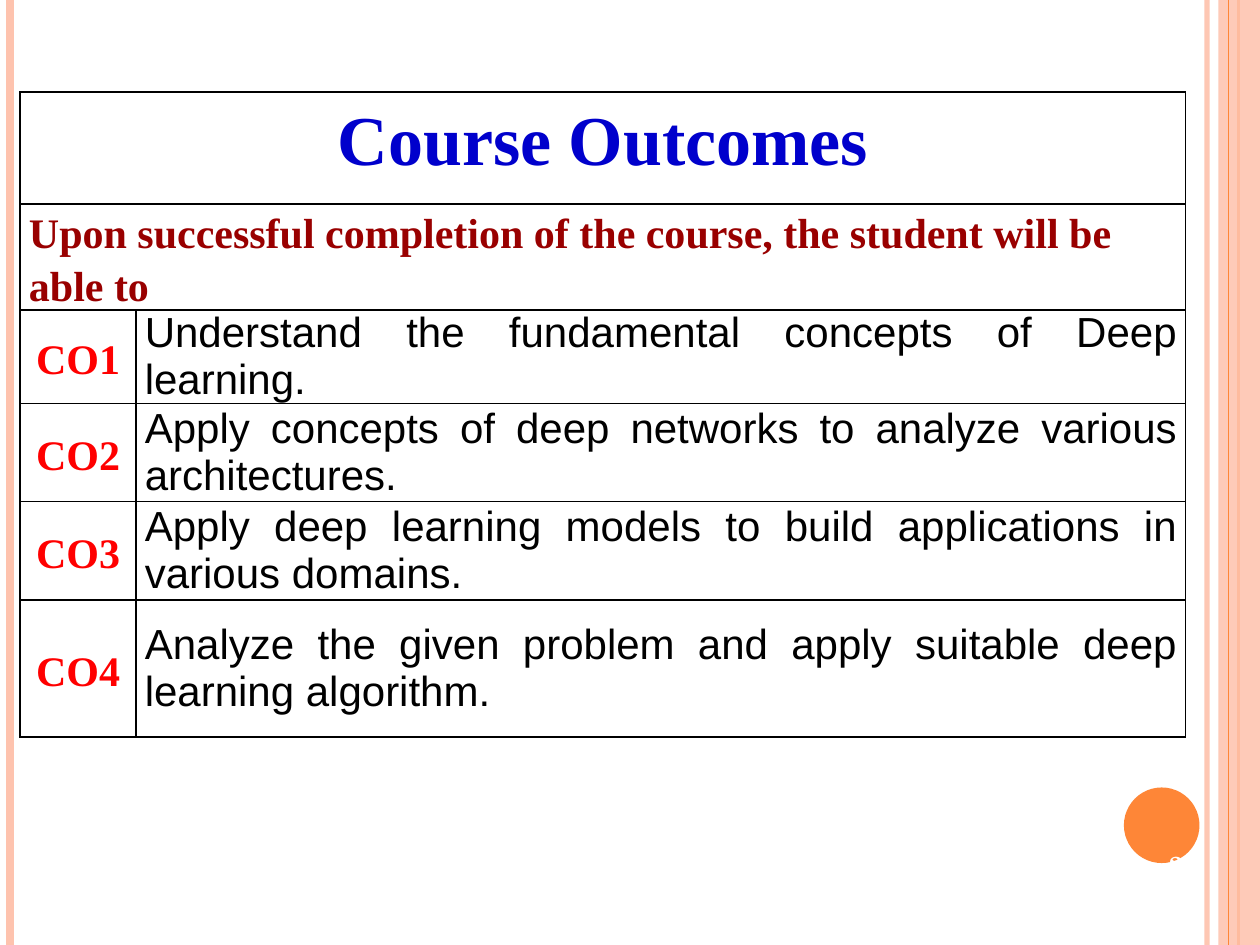
from lxml.etree import SubElement
from pptx import Presentation
from pptx.dml.color import RGBColor
from pptx.enum.shapes import MSO_CONNECTOR, MSO_SHAPE
from pptx.enum.text import MSO_ANCHOR, PP_ALIGN
from pptx.oxml.ns import qn
from pptx.util import Inches, Pt


def paint(fill, color, opacity=100):
    fill.solid()
    fill.fore_color.rgb = RGBColor.from_string(color)
    if opacity < 100:
        color_node = fill._xPr.find(qn("a:solidFill"))[0]
        SubElement(color_node, qn("a:alpha"), val=str(opacity * 1000))


def write(frame, text, font, size, color, bold, align, spacing=None):
    frame.text = text
    para = frame.paragraphs[0]
    para.alignment = align
    para.line_spacing = spacing
    span = para.runs[0]
    span.font.name = font
    span.font.size = Pt(size)
    span.font.bold = bold
    paint(span.font.fill, color)


deck = Presentation()
deck.slide_width = Inches(10)
deck.slide_height = Inches(7.5)
page = deck.slides.add_slide(deck.slide_layouts[6])
paint(page.background.fill, "FFFFFF")

decorations = [
    ("stripe", 9.58, "FEC3AE", 3, 93),
    ("stripe", 0.08, "FEC3AE", 4.5, 100),
    ("stripe", 9.83, "FE8637", 1.5, 100),
    ("band", 9.67, "FEC3AE", 0, 87),
    ("stripe", 9.75, "FE8637", 0.75, 100),
    ("badge", 8.92, "FE8637", 0, 100),
]
for kind, x, color, width, opacity in decorations:
    if kind == "stripe":
        stripe = page.shapes.add_connector(
            MSO_CONNECTOR.STRAIGHT, Inches(x), 0, Inches(x), Inches(7.5))
        stripe.line.width = Pt(width)
        paint(stripe.line.fill, color, opacity)
        SubElement(stripe._element.spPr, qn("a:effectLst"))
        continue
    if kind == "band":
        shape = page.shapes.add_shape(
            MSO_SHAPE.RECTANGLE, Inches(x), 0, Inches(0.33), Inches(7.5))
    else:
        shape = page.shapes.add_shape(
            MSO_SHAPE.OVAL, Inches(x), Inches(6.25), Inches(0.6), Inches(0.6))
    shape.shadow.inherit = False
    shape.line.fill.background()
    paint(shape.fill, color, opacity)

number_box = page.shapes.add_textbox(
    Inches(8.92), Inches(6.33), Inches(0.94), Inches(1.07))
number_box.text_frame.word_wrap = True
number_box.text_frame.vertical_anchor = MSO_ANCHOR.MIDDLE
write(number_box.text_frame, "21", "TeX Gyre Schola", 14, "FFFFFF", True,
      PP_ALIGN.CENTER)

outcomes = [
    "Understand the fundamental concepts of Deep learning. ",
    "Apply concepts of deep networks to analyze various architectures.",
    "Apply deep learning models to build applications in various domains.",
    "Analyze the given problem and apply suitable deep learning algorithm.",
]
row_heights = [0.89, 0.84, 0.74, 0.78, 0.78, 1.09]
table = page.shapes.add_table(
    len(row_heights), 2, Inches(0.16), Inches(0.73),
    Inches(9.25), Inches(sum(row_heights))).table
table.first_row = False
table.horz_banding = False
table.columns[0].width = Inches(0.92)
table.columns[1].width = Inches(8.33)
for row, height in zip(table.rows, row_heights):
    row.height = Inches(height)

for cell in table.iter_cells():
    cell.margin_left = cell.margin_right = Inches(0.07)
    cell.margin_top = cell.margin_bottom = 0
    properties = cell._tc.get_or_add_tcPr()
    for side in ("lnL", "lnR", "lnT", "lnB"):
        border = SubElement(properties, qn("a:" + side), w=str(Pt(1)))
        border_fill = SubElement(border, qn("a:solidFill"))
        SubElement(border_fill, qn("a:srgbClr"), val="000000")
    cell.fill.background()

for index in range(2):
    table.cell(index, 0).merge(table.cell(index, 1))
write(table.cell(0, 0).text_frame, "Course Outcomes",
      "Times New Roman", 40, "0000CC", True, PP_ALIGN.CENTER, 1.15)
table.cell(1, 0).margin_bottom = Inches(-0.08)
write(table.cell(1, 0).text_frame,
      "Upon successful completion of the course, the student will be able to",
      "Times New Roman", 24, "990000", True, PP_ALIGN.LEFT, 1.15)

for number, outcome in enumerate(outcomes, start=1):
    code_cell, outcome_cell = table.rows[number + 1].cells
    code_cell.vertical_anchor = MSO_ANCHOR.MIDDLE
    outcome_cell.vertical_anchor = MSO_ANCHOR.MIDDLE
    outcome_cell.margin_top = outcome_cell.margin_bottom = Inches(-0.03)
    write(code_cell.text_frame, f"CO{number}",
          "Times New Roman", 24, "FF0000", True, PP_ALIGN.CENTER, 1.15)
    write(outcome_cell.text_frame, outcome,
          "Arial", 24, "000000", False, PP_ALIGN.JUSTIFY)

deck.save("out.pptx")
